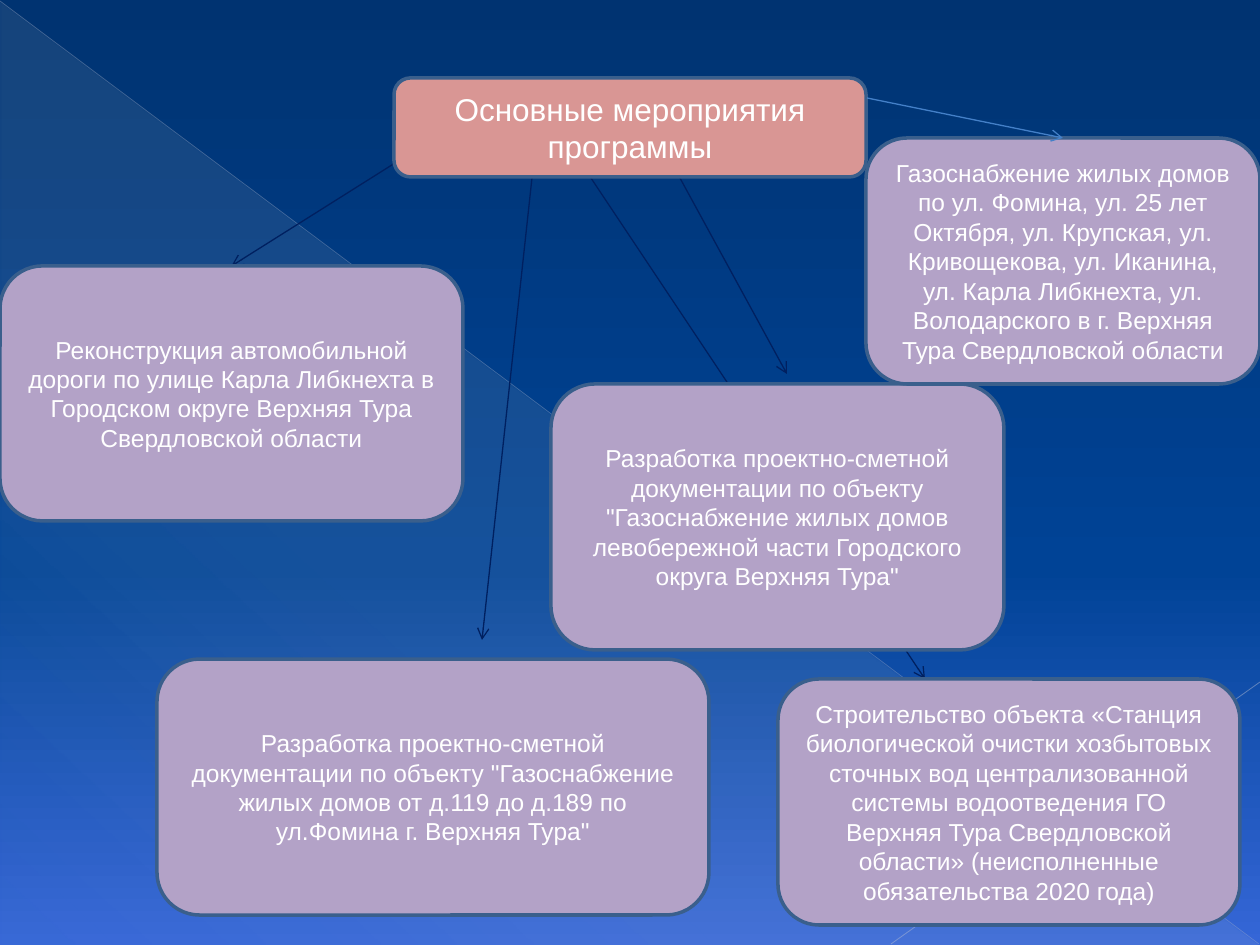
import pptx
import pptx.util
import pptx.dml.color
import pptx.enum.shapes
import pptx.enum.text
import pptx.oxml.ns
import lxml.etree

PX = 914400 / 126
HUES = {
    "title": "D99694", "card": "B3A2C7", "edge": "3A5F8C", "text": "FFFFFF",
    "navy": "002060", "blue": "4480C8", "ray": "ADB6CE", "beam": "B6BED3",
}
SKY = [(0, "003371", 100), (60, "004396", 100), (100, "3566D7", 100)]
GLOW = [(0, "EEECE1", 10), (70, "EEECE1", 8), (100, "EEECE1", 1)]

RAYS = [
    ((0, 1, 1259, 944), "ray", 0.39, 35),
    ((1260, 682, 891, 944), "beam", 0.47, 45),
]
BOXES = {
    "title": ((394, 78, 472, 99), "title", 18, "Основные мероприятия программы"),
    "plant": ((778, 679, 462, 246), "card", 14,
              "Строительство объекта «Станция биологической очистки хозбытовых "
              "сточных вод централизованной системы водоотведения ГО Верхняя Тура "
              "Свердловской области» (неисполненные обязательства 2020 года)"),
    "road": ((0, 266, 463, 255), "card", 14,
             "Реконструкция автомобильной дороги по улице Карла Либкнехта в "
             "Городском округе Верхняя Тура Свердловской области"),
    "bank": ((551, 384, 453, 266), "card", 14,
             "Разработка проектно-сметной документации по объекту \"Газоснабжение "
             "жилых домов левобережной части Городского округа Верхняя Тура\""),
    "homes": ((157, 659, 552, 256), "card", 14,
              "Разработка проектно-сметной документации по объекту \"Газоснабжение "
              "жилых домов от д.119 до д.189 по ул.Фомина г. Верхняя Тура\""),
    "gas": ((866, 138, 394, 246), "card", 14,
            "Газоснабжение жилых домов по ул. Фомина, ул. 25 лет Октября, "
            "ул. Крупская, ул. Кривощекова, ул. Иканина, ул. Карла Либкнехта, "
            "ул. Володарского в г. Верхняя Тура Свердловской области"),
}
BACK = [
    ((532, 178, 482, 640), None),
    ((403, 158, 232, 266), "road"),
    ((591, 178, 925, 679), None),
    ((680, 178, 787, 374), None),
]
FRONT = [((867, 98, 1063, 138), "gas")]


def emu(nums):
    return [round(n * PX) for n in nums]


def rgb(hue):
    return pptx.dml.color.RGBColor.from_string(hue)


def sub(node, tag, **vals):
    return lxml.etree.SubElement(node, pptx.oxml.ns.qn(tag), vals)


def fade(node, part):
    sub(node, "a:alpha", val=str(part * 1000))


def blend(fill, root, stops, turn):
    fill.gradient()
    grad = root.find(".//" + pptx.oxml.ns.qn("a:gradFill"))
    for kid in list(grad):
        grad.remove(kid)
    group = sub(grad, "a:gsLst")
    for pos, hue, part in stops:
        stop = sub(group, "a:gs", pos=str(pos * 1000))
        tint = sub(stop, "a:srgbClr", val=hue)
        if part < 100:
            fade(tint, part)
    sub(grad, "a:lin", ang=str(turn * 60000), scaled="0")


def draw(ends, hue, width):
    link = slide.shapes.add_connector(pptx.enum.shapes.MSO_CONNECTOR.STRAIGHT, *emu(ends))
    link.line.color.rgb = rgb(HUES[hue])
    link.line.width = pptx.util.Pt(width)
    sub(link._element.spPr, "a:effectLst")
    return link


def arrow(ends, hue):
    link = draw(ends, hue, 0.75)
    sub(link.line._get_or_add_ln(), "a:tailEnd", type="arrow")
    return link


def box(area, hue, size, text):
    item = slide.shapes.add_shape(pptx.enum.shapes.MSO_SHAPE.ROUNDED_RECTANGLE, *emu(area))
    item.shadow.inherit = False
    item.fill.solid()
    item.fill.fore_color.rgb = rgb(HUES[hue])
    item.line.color.rgb = rgb(HUES["edge"])
    item.line.width = pptx.util.Pt(2)
    frame = item.text_frame
    frame.word_wrap = True
    frame.vertical_anchor = pptx.enum.text.MSO_ANCHOR.MIDDLE
    para = frame.paragraphs[0]
    para.alignment = pptx.enum.text.PP_ALIGN.CENTER
    run = para.add_run()
    run.text = text
    run.font.color.rgb = rgb(HUES["text"])
    for name, val in {"name": "Arial", "size": pptx.util.Pt(size)}.items():
        setattr(run.font, name, val)
    return item


deck = pptx.Presentation()
deck.slide_width, deck.slide_height = emu((1260, 945))
slide = deck.slides.add_slide(deck.slide_layouts[6])
blend(slide.background.fill, slide._element, SKY, 90)

wedge = slide.shapes.add_shape(
    pptx.enum.shapes.MSO_SHAPE.RIGHT_TRIANGLE, *emu((1, 2, 1258, 943)))
wedge.shadow.inherit = False
wedge.line.fill.background()
blend(wedge.fill, wedge._element, GLOW, 133)

for ends, hue, width, part in RAYS:
    ray = draw(ends, hue, width)
    fade(ray._element.find(".//" + pptx.oxml.ns.qn("a:srgbClr")), part)

links = [(arrow(ends, "navy"), goal) for ends, goal in BACK]
cards = {key: box(*row) for key, row in BOXES.items()}
links += [(arrow(ends, "blue"), goal) for ends, goal in FRONT]
for link, goal in links:
    if goal:
        link.end_connect(cards[goal], 0)

deck.save("out.pptx")
